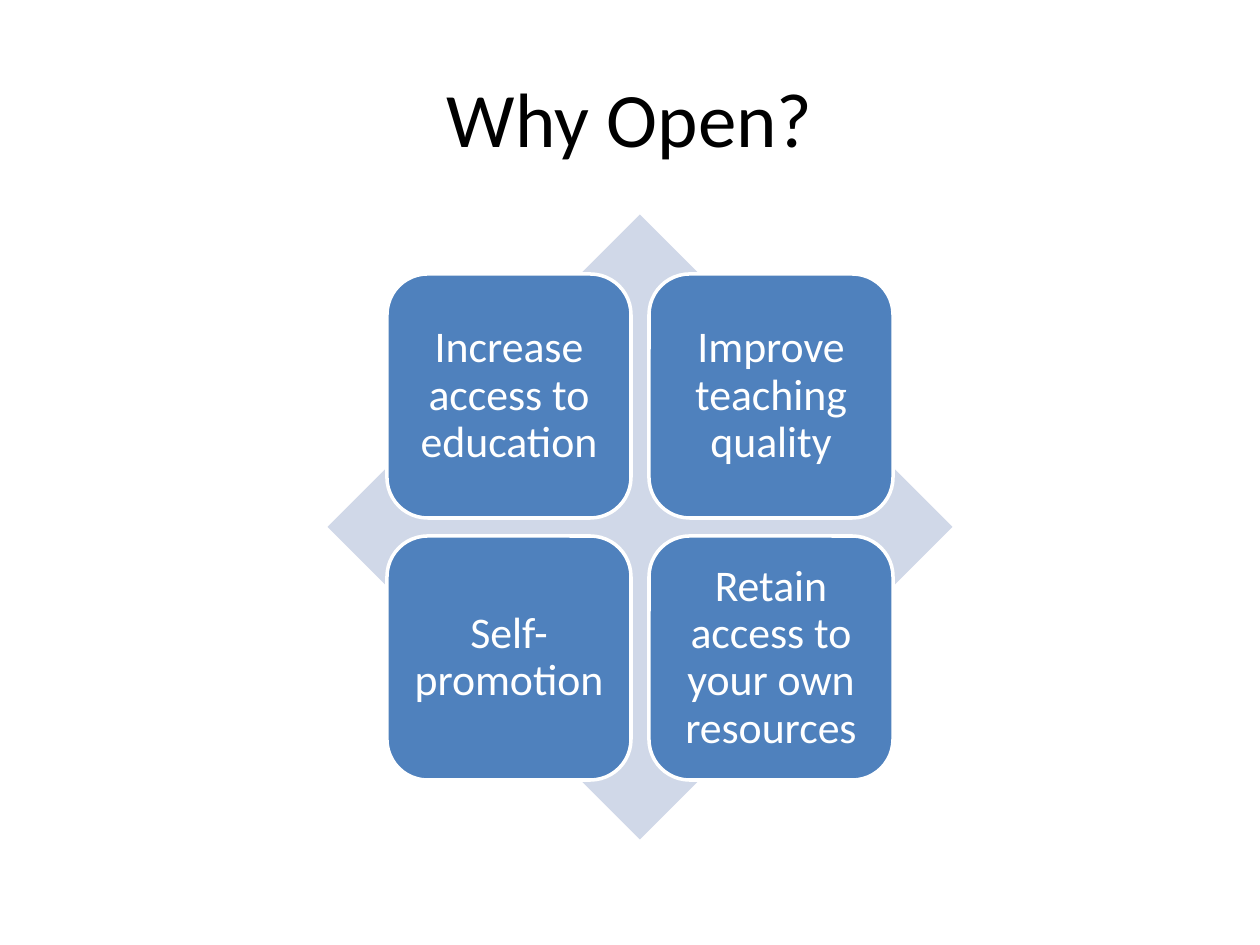
from pptx import Presentation
from pptx.dml.color import RGBColor
from pptx.enum import shapes, text
from pptx.util import Pt

TITLE = "Why Open?"
REASONS = [
    ["Increase access to education", "Improve teaching quality"],
    ["Self-promotion", "Retain access to your own resources"],
]

BLACK = RGBColor(0x00, 0x00, 0x00)
WHITE = RGBColor(0xFF, 0xFF, 0xFF)
BLUE = RGBColor(0x4F, 0x81, 0xBD)
PALE_BLUE = RGBColor(0xD0, 0xD8, 0xE8)

PX = 914400 // 126
PAGE_SIZE = (1260, 945)
TITLE_BOX = (63, 38, 1134, 157)
CENTER = (640, 527)
DIAMOND = 625
TILE = 244
GAP = 18
INSET = 13

TITLE_FONT = {"name": "Calibri", "size": Pt(44)}
TILE_FONT = {"name": "Calibri", "size": Pt(25)}
FRAME = {
    "word_wrap": True,
    "vertical_anchor": text.MSO_ANCHOR.MIDDLE,
    "margin_left": INSET * PX,
    "margin_right": INSET * PX,
    "margin_top": INSET * PX,
    "margin_bottom": INSET * PX,
}


def apply(target, values):
    for name, value in values.items():
        setattr(target, name, value)


def write(box, words, font, color, line_spacing):
    apply(box.text_frame, FRAME)
    para = box.text_frame.paragraphs[0]
    apply(para, {"alignment": text.PP_ALIGN.CENTER, "line_spacing": line_spacing})
    span = para.add_run()
    span.text = words
    apply(span.font, font)
    span.font.color.rgb = color


def add_square(page, kind, left, top, side, fill):
    box = page.shapes.add_shape(kind, *(round(v * PX) for v in (left, top, side, side)))
    box.shadow.inherit = False
    box.fill.solid()
    box.fill.fore_color.rgb = fill
    box.line.fill.background()
    return box


def main():
    deck = Presentation()
    deck.slide_width, deck.slide_height = (v * PX for v in PAGE_SIZE)
    page = deck.slides.add_slide(deck.slide_layouts[6])

    title = page.shapes.add_textbox(*(v * PX for v in TITLE_BOX))
    write(title, TITLE, TITLE_FONT, BLACK, 1.0)

    left, top = (v - DIAMOND / 2 for v in CENTER)
    add_square(page, shapes.MSO_SHAPE.DIAMOND, left, top, DIAMOND, PALE_BLUE)

    left, top = (v - TILE - GAP / 2 for v in CENTER)
    step = TILE + GAP
    for row, reasons in enumerate(REASONS):
        for column, reason in enumerate(reasons):
            tile = add_square(page, shapes.MSO_SHAPE.ROUNDED_RECTANGLE,
                              left + column * step, top + row * step, TILE, BLUE)
            tile.line.color.rgb = WHITE
            tile.line.width = Pt(2)
            write(tile, reason, TILE_FONT, WHITE, 0.9)

    deck.save("out.pptx")


if __name__ == "__main__":
    main()
